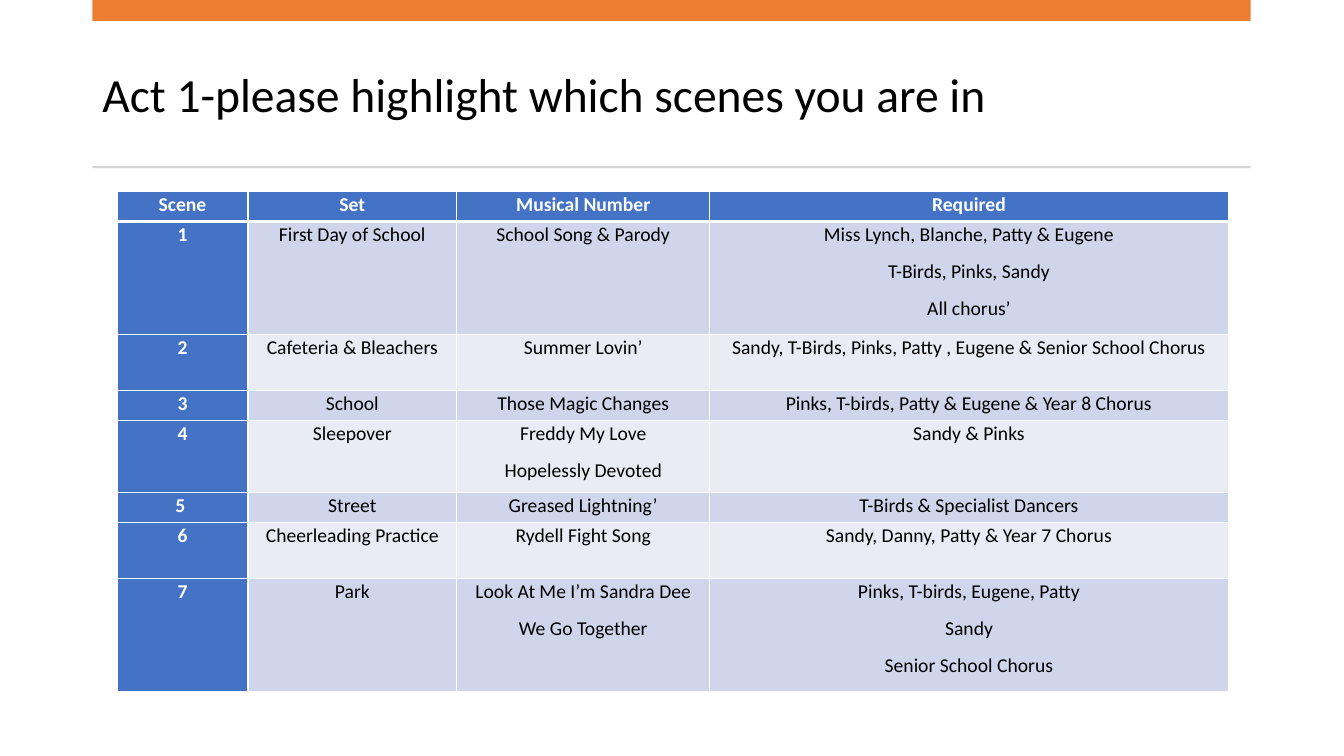
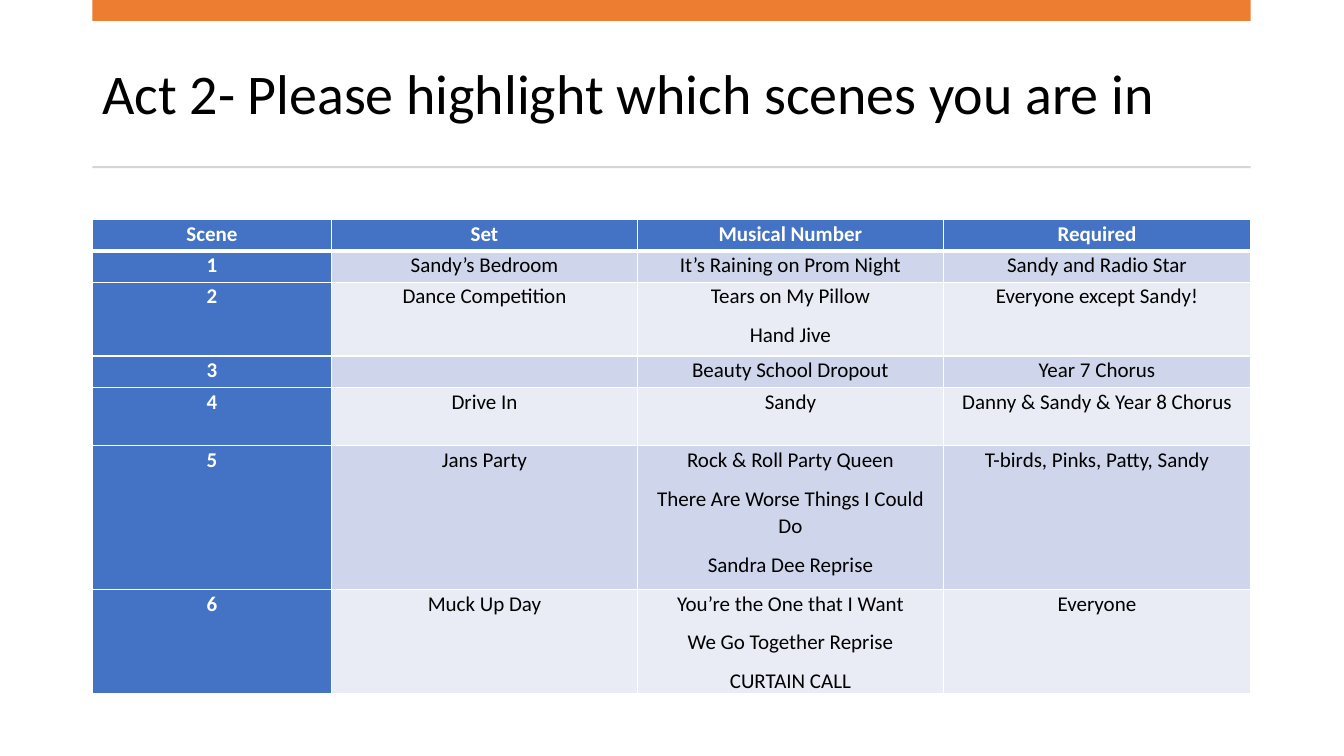
from lxml.etree import SubElement
from pptx import Presentation
from pptx.dml.color import RGBColor
from pptx.enum.shapes import MSO_SHAPE as SHAPE
from pptx.enum.text import MSO_ANCHOR as ANCHOR, PP_ALIGN as ALIGN
from pptx.oxml.ns import qn
from pptx.util import Cm, Pt

# Shared style
FONT = "Calibri"
WHITE, BLACK = "FFFFFF", "000000"
ORANGE, GREY, BLUE = "ED7D31", "D5D5D5", "4472C4"
STRIPES = "CFD5EA", "E9EBF5"
LEFT, WIDTH = 2.33, 29.19
HEADER = "Scene", "Set", "Musical Number", "Required"

# Rows: height in cm, then one text per column, one line per paragraph
ACT_1 = [
    (0.75, *HEADER),
    (2.85, "1", "First Day of School", "School Song & Parody",
     "Miss Lynch, Blanche, Patty & Eugene\nT-Birds, Pinks, Sandy\nAll chorus’"),
    (1.41, "2", "Cafeteria & Bleachers", "Summer Lovin’",
     "Sandy, T-Birds, Pinks, Patty , Eugene & Senior School Chorus"),
    (0.76, "3", "School", "Those Magic Changes",
     "Pinks, T-birds, Patty & Eugene & Year 8 Chorus"),
    (1.81, "4", "Sleepover", "Freddy My Love\nHopelessly Devoted", "Sandy & Pinks"),
    (0.76, "5 ", "Street", "Greased Lightning’", "T-Birds & Specialist Dancers"),
    (1.41, "6", "Cheerleading Practice", "Rydell Fight Song",
     "Sandy, Danny, Patty & Year 7 Chorus"),
    (2.85, "7", "Park", "Look At Me I’m Sandra Dee\nWe Go Together",
     "Pinks, T-birds, Eugene, Patty\nSandy\nSenior School Chorus"),
]
ACT_2 = [
    (0.78, *HEADER),
    (0.79, "1", "Sandy’s Bedroom", "It’s Raining on Prom Night", "Sandy and Radio Star"),
    (1.86, "2", "Dance Competition", "Tears on My Pillow\nHand Jive",
     "Everyone except Sandy!"),
    (0.79, "3", "", "Beauty School Dropout", "Year 7 Chorus"),
    (1.47, "4", "Drive In", "Sandy", "Danny & Sandy & Year 8 Chorus"),
    (3.62, "5", "Jans Party",
     "Rock & Roll Party Queen\nThere Are Worse Things I Could Do\nSandra Dee Reprise",
     "T-birds, Pinks, Patty, Sandy"),
    (2.64, "6", "Muck Up Day",
     "You’re the One that I Want\nWe Go Together Reprise\nCURTAIN CALL", "Everyone"),
]


def paint(target, color):
    target.fill.solid()
    target.fill.fore_color.rgb = RGBColor.from_string(color)


def set_font(p, size, color, bold=False):
    p.font.name, p.font.size, p.font.bold = FONT, Pt(size), bold
    p.font.color.rgb = RGBColor.from_string(color)


def add_band(s, top, height, color):
    sp = s.shapes.add_shape(SHAPE.RECTANGLE, Cm(LEFT), Cm(top), Cm(WIDTH), Cm(height))
    sp.shadow.inherit = False
    sp.line.fill.background()
    paint(sp, color)


def add_heading(s, text, size):
    # Title between the top band and the thin rule
    sp = s.shapes.add_textbox(Cm(LEFT), Cm(0.94), Cm(WIDTH), Cm(3))
    tf = sp.text_frame
    tf.word_wrap, tf.vertical_anchor = True, ANCHOR.MIDDLE
    p = tf.paragraphs[0]
    p.text, p.line_spacing = text, 0.9
    set_font(p, size, BLACK)
    add_band(s, 0, 0.53, ORANGE)
    add_band(s, 4.19, 0.05, GREY)


def set_borders(cell, **widths):
    tc_pr = cell._tc.get_or_add_tcPr()
    for side in "LRTB":
        ln = SubElement(tc_pr, qn("a:ln" + side), w=str(Pt(widths.get(side, 1))))
        fill = SubElement(ln, qn("a:solidFill"))
        SubElement(fill, qn("a:srgbClr"), val=WHITE)


def fill_cell(cell, text, size, inset, row, col):
    strong = row == 0 or col == 0
    cell.margin_left = cell.margin_right = Cm(inset)
    cell.margin_top = cell.margin_bottom = 0
    cell.text = text
    for p in cell.text_frame.paragraphs:
        p.alignment, p.line_spacing, p.space_after = ALIGN.CENTER, 1.07, Pt(8)
        set_font(p, size, WHITE if strong else BLACK, strong)
    # Heavier line between header and body
    set_borders(cell, B=3 if row == 0 else 1, T=3 if row == 1 else 1)
    paint(cell, BLUE if strong else STRIPES[(row - 1) % 2])


def add_scenes(s, left, top, widths, rows, size, inset):
    height = sum(row[0] for row in rows)
    table = s.shapes.add_table(len(rows), len(widths), Cm(left), Cm(top),
                               Cm(sum(widths)), Cm(height)).table
    table.first_row = table.horz_banding = False
    for column, width in zip(table.columns, widths):
        column.width = Cm(width)
    for i, (row_height, *texts) in enumerate(rows):
        table.rows[i].height = Cm(row_height)
        for j, text in enumerate(texts):
            fill_cell(table.cell(i, j), text, size, inset, i, j)


def add_act(prs, title, title_size, **scenes):
    s = prs.slides.add_slide(prs.slide_layouts[6])
    add_heading(s, title, title_size)
    add_scenes(s, **scenes)


def main():
    prs = Presentation()
    prs.slide_width, prs.slide_height = Cm(33.87), Cm(19.05)
    add_act(prs, "Act 1-please highlight which scenes you are in", 34,
            left=2.95, top=4.83, widths=(3.3, 5.26, 6.38, 13.06),
            rows=ACT_1, size=14, inset=0.23)
    add_act(prs, "Act 2- Please highlight which scenes you are in", 40,
            left=LEFT, top=5.54, widths=(6.02, 7.72, 7.7, 7.75),
            rows=ACT_2, size=15, inset=0.25)
    prs.save("out.pptx")


if __name__ == "__main__":
    main()
